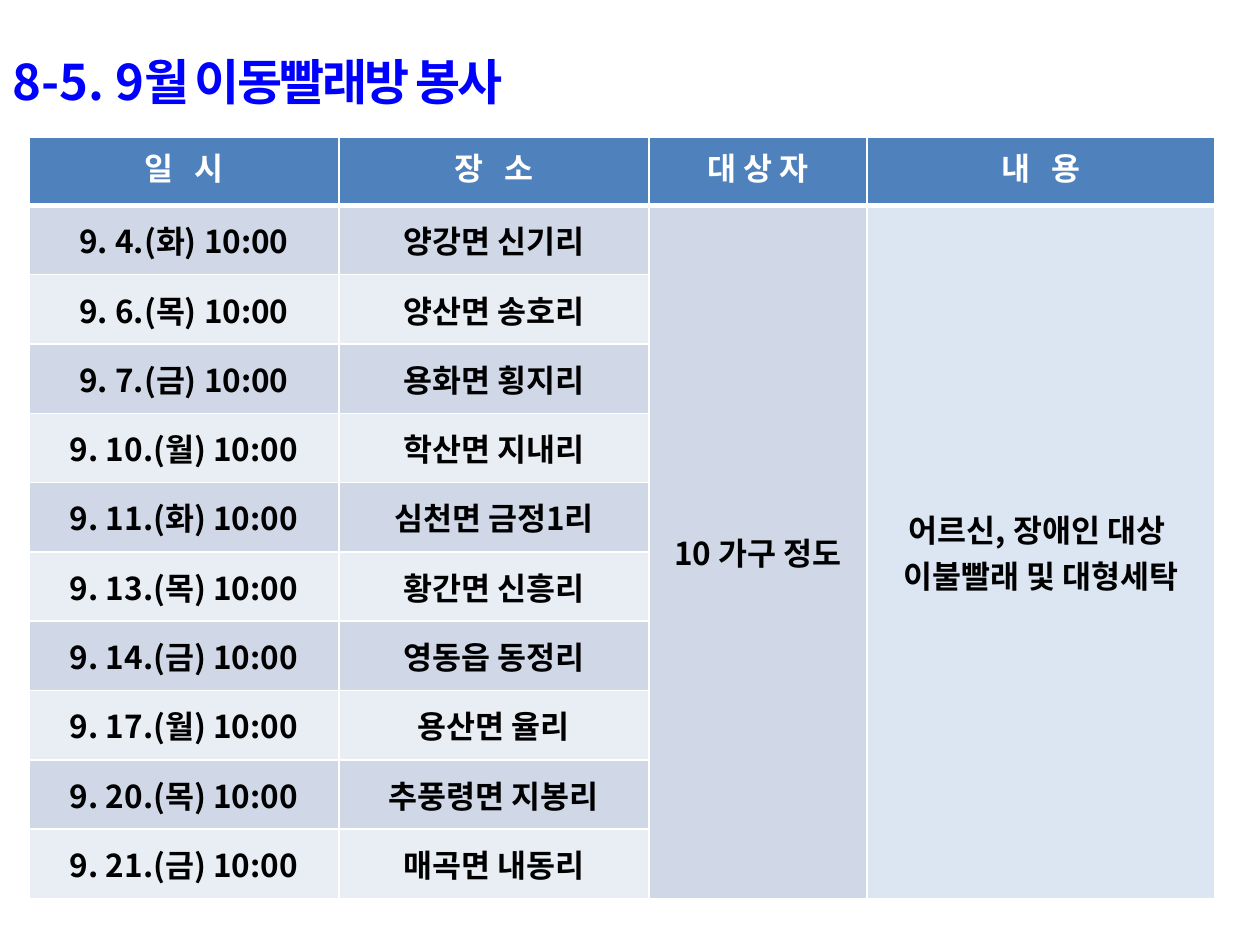
from dataclasses import dataclass

from lxml import etree
from pptx import Presentation, util as u
from pptx.dml.color import RGBColor
from pptx.enum import text
from pptx.oxml import ns


@dataclass(frozen=True)
class Theme:
    title: str = "0000FF"
    header: str = "4F81BD"
    bands: tuple = ("D0D8E8", "E9EDF4")
    content: str = "DCE6F2"
    white: str = "FFFFFF"
    black: str = "000000"
    title_size: int = 28
    cell_size: int = 18
    header_font: str = "Arial"
    body_font: str = "Noto Sans CJK KR"


def add_text(p, content, *, size, font, color, spacing=None):
    r = p.add_run()
    r.text = content
    r.font.size = u.Pt(size)
    r.font.bold = True
    r.font.name = font
    r.font.color.rgb = RGBColor.from_string(color)
    rPr = r.font._element
    etree.SubElement(rPr, ns.qn("a:ea")).set("typeface", Theme.body_font)
    if spacing is not None:
        rPr.set("spc", str(int(spacing * 100)))


class SlideBuilder:
    def __init__(self, s, theme):
        self.s = s
        self.theme = theme

    def title(self, number, caption):
        t = self.theme
        sp = self.s.shapes.add_textbox(0, u.Inches(0.13), u.Inches(10), u.Inches(7.37))
        tf = sp.text_frame
        tf.word_wrap = True
        p = tf.paragraphs[0]
        p.line_spacing = 1.5
        style = dict(size=t.title_size, font=t.body_font, color=t.title)
        add_text(p, number, **style)
        add_text(p, caption, spacing=-1.5, **style)

    def cell(self, cell, lines, fill, header=False):
        t = self.theme
        cell.fill.solid()
        cell.fill.fore_color.rgb = RGBColor.from_string(fill)
        if not header:
            cell.vertical_anchor = text.MSO_ANCHOR.MIDDLE
        tf = cell.text_frame
        for i, line in enumerate(lines):
            p = tf.add_paragraph() if i else tf.paragraphs[0]
            p.alignment = text.PP_ALIGN.CENTER
            add_text(p, line, size=t.cell_size,
                     font=t.header_font if header else t.body_font,
                     color=t.white if header else t.black)

    def borders(self, cell, top=1, bottom=1):
        tcPr = cell._tc.get_or_add_tcPr()
        widths = {"lnL": 1, "lnR": 1, "lnT": top, "lnB": bottom}
        for i, (side, width) in enumerate(widths.items()):
            ln = etree.Element(ns.qn(f"a:{side}"), w=str(u.Pt(width)))
            fill = etree.SubElement(ln, ns.qn("a:solidFill"))
            etree.SubElement(fill, ns.qn("a:srgbClr"), val=self.theme.white)
            tcPr.insert(i, ln)

    def schedule(self, headers, visits, target, content):
        t = self.theme
        widths = (2.46, 2.46, 1.73, 2.76)
        heights = [0.54] + [0.55] * len(visits)
        tbl = self.s.shapes.add_table(
            len(heights), len(widths), u.Inches(0.23), u.Inches(1.09),
            u.Inches(sum(widths)), u.Inches(sum(heights))).table
        for col, width in zip(tbl.columns, widths):
            col.width = u.Inches(width)
        for row, height in zip(tbl.rows, heights):
            row.height = u.Inches(height)

        for c, header in enumerate(headers):
            self.cell(tbl.cell(0, c), [header], t.header, header=True)
        for r, visit in enumerate(visits, 1):
            for c, value in enumerate(visit):
                self.cell(tbl.cell(r, c), [value], t.bands[(r - 1) % 2])
        for c, lines, fill in ((2, target, t.bands[0]), (3, content, t.content)):
            tbl.cell(1, c).merge(tbl.cell(len(visits), c))
            self.cell(tbl.cell(1, c), lines, fill)

        for r in range(len(heights)):
            for c in range(len(widths)):
                self.borders(tbl.cell(r, c), top=3 if r == 1 else 1,
                             bottom=3 if r == 0 else 1)


def main():
    prs = Presentation()
    prs.slide_width, prs.slide_height = u.Inches(10), u.Inches(7.5)
    slide = SlideBuilder(prs.slides.add_slide(prs.slide_layouts[6]), Theme())
    visits = [
        ("9. 4.(화) 10:00", "양강면 신기리"),
        ("9. 6.(목) 10:00", "양산면 송호리"),
        ("9. 7.(금) 10:00", "용화면 횡지리"),
        ("9. 10.(월) 10:00", "학산면 지내리"),
        ("9. 11.(화) 10:00", "심천면 금정1리"),
        ("9. 13.(목) 10:00", "황간면 신흥리"),
        ("9. 14.(금) 10:00", "영동읍 동정리"),
        ("9. 17.(월) 10:00", "용산면 율리"),
        ("9. 20.(목) 10:00", "추풍령면 지봉리"),
        ("9. 21.(금) 10:00", "매곡면 내동리"),
    ]
    slide.schedule(("일   시", "장   소", "대 상 자", "내   용"), visits,
                   ["10 가구 정도"], ["어르신, 장애인 대상 ", "이불빨래 및 대형세탁"])
    slide.title("8-5. ", "9월 이동빨래방 봉사")
    prs.save("out.pptx")


if __name__ == "__main__":
    main()
